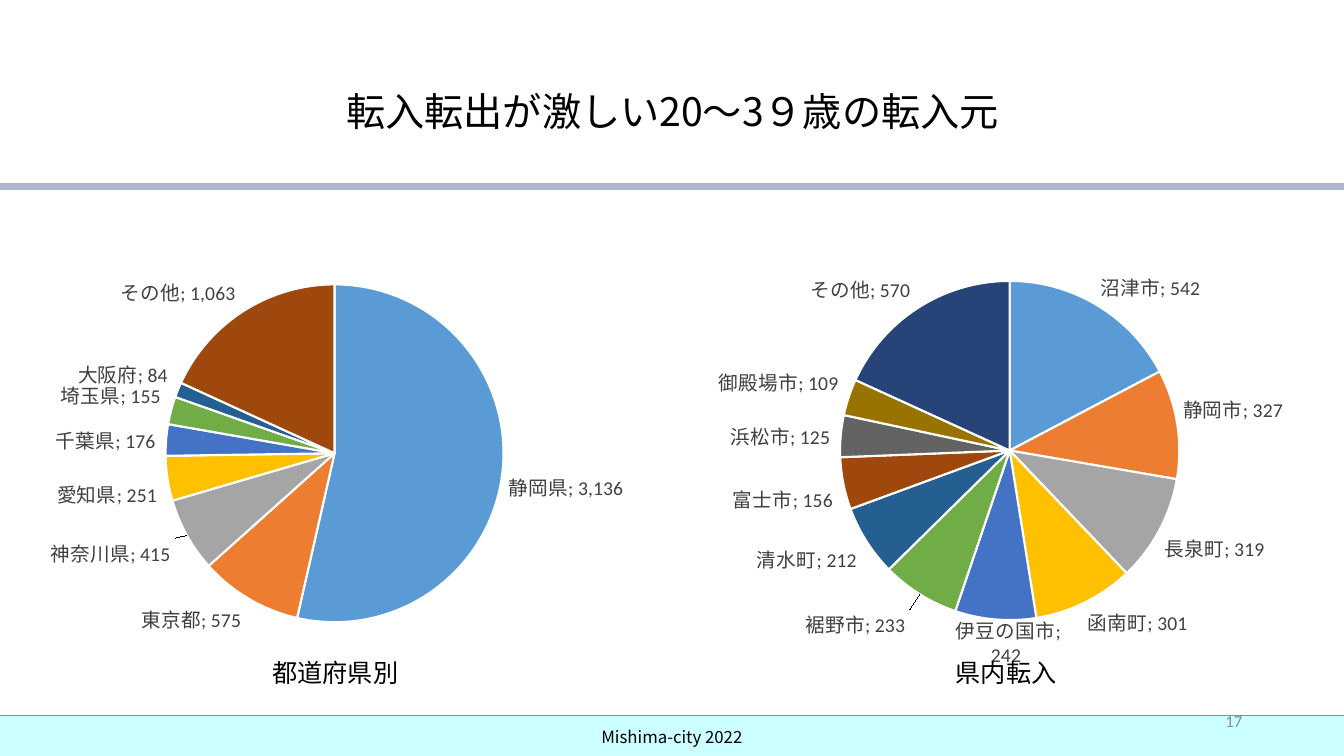
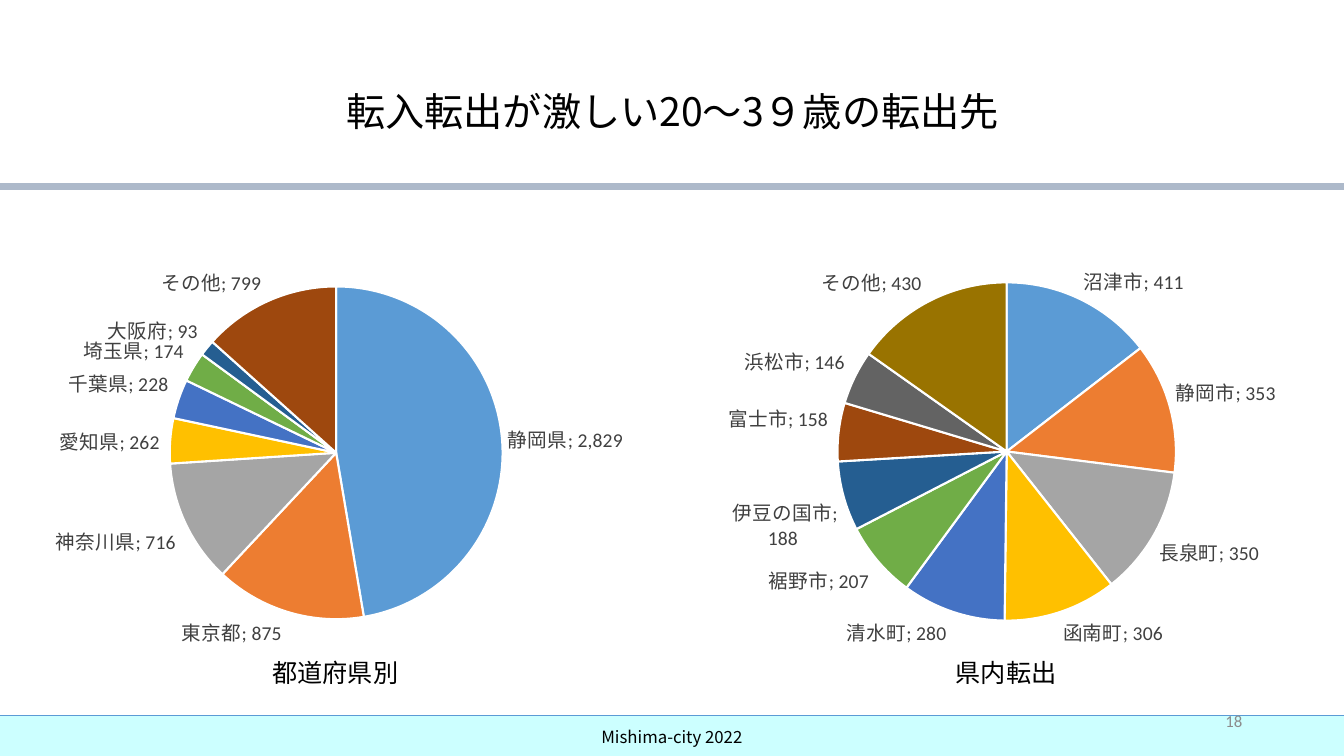
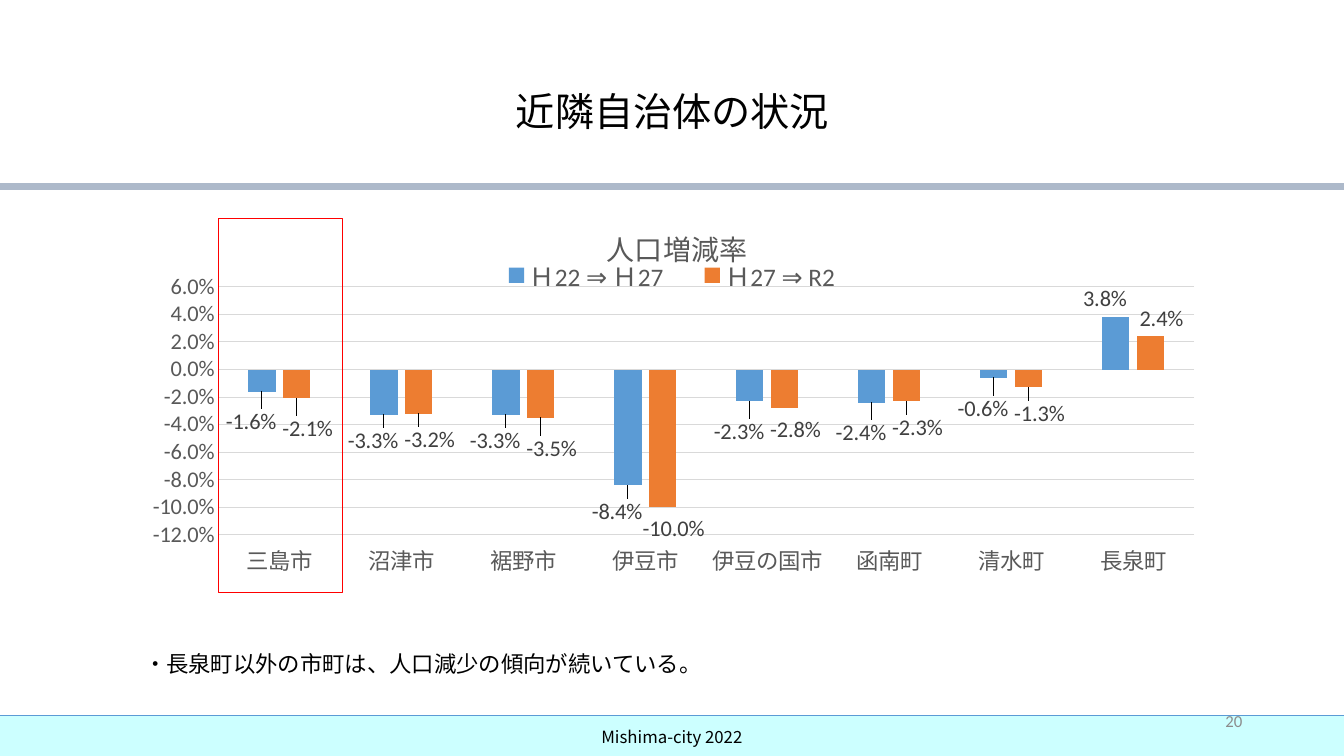
"""Builds three slides on migration and population change around Mishima."""
from dataclasses import dataclass
from typing import Optional

from lxml.etree import SubElement
from pptx import Presentation
from pptx.chart.chart import Chart
from pptx.chart.data import CategoryChartData
from pptx.dml.color import RGBColor
from pptx.enum.chart import XL_CHART_TYPE as ChartType
from pptx.enum.chart import XL_LABEL_POSITION as LabelPosition
from pptx.enum.chart import XL_LEGEND_POSITION as LegendPosition
from pptx.enum.chart import XL_TICK_LABEL_POSITION as TickLabelPosition
from pptx.enum.chart import XL_TICK_MARK as TickMark
from pptx.enum.shapes import MSO_CONNECTOR as ConnectorType
from pptx.enum.shapes import MSO_SHAPE as ShapeType
from pptx.enum.text import MSO_ANCHOR as Anchor
from pptx.enum.text import PP_ALIGN as Align
from pptx.oxml import parse_xml
from pptx.oxml.ns import nsdecls, qn
from pptx.oxml.xmlchemy import BaseOxmlElement
from pptx.slide import Slide
from pptx.text.text import Font, TextFrame
from pptx.util import Inches, Pt

Box = tuple[float, float, float, float]
Shift = tuple[float, float]


@dataclass(frozen=True)
class Theme:
    """Fonts, type sizes and colours of the deck."""
    latin: str = "Calibri"
    japanese: str = "Noto Sans CJK JP"
    title_size: int = 28
    chart_title_size: int = 20
    caption_size: int = 18
    body_size: int = 16
    label_size: int = 14
    small_size: int = 12
    chart_size: int = 10
    black: str = "000000"
    white: str = "FFFFFF"
    label: str = "404040"
    axis: str = "595959"
    grid: str = "D9D9D9"
    number: str = "8C8C8C"
    band: str = "CCFFFF"
    rule: str = "ADB9CA"
    highlight: str = "FF0000"
    palette: tuple[str, ...] = (
        "5B9BD5", "ED7D31", "A5A5A5", "FFC000", "4472C4", "70AD47",
        "255E91", "9E480E", "636363", "997300", "264478")


@dataclass(frozen=True)
class Pie:
    """One pie chart with its caption and moved labels."""
    caption: str
    caption_box: Box
    box: Box
    plot: Box
    values: dict[str, int]
    shifts: dict[int, Shift]


@dataclass(frozen=True)
class PieSlide:
    """A slide with two pies side by side."""
    title: str
    number: int
    pies: tuple[Pie, Pie]


@dataclass(frozen=True)
class BarSeries:
    """One column series with the shifts of its labels."""
    name: str
    values: tuple[float, ...]
    shift_x: float
    shifts_y: tuple[float, ...]


THEME = Theme()
WIDTH, HEIGHT = 13.33, 7.5
BAND_TOP, RULE_TOP = 7.1, 1.85
LEFT_CAPTION: Box = (2.58, 6.47, 1.49, 0.4)
RIGHT_CAPTION: Box = (9.16, 6.47, 1.64, 0.4)

PIE_SLIDES = (
    PieSlide("転入転出が激しい20～3９歳の転入元", 17, (
        Pie("都道府県別", LEFT_CAPTION, (0, 1.97, 6.65, 5.04), (0.247, 0.169, 0.504, 0.665),
            {"静岡県": 3136, "東京都": 575, "神奈川県": 415, "愛知県": 251,
             "千葉県": 176, "埼玉県": 155, "大阪府": 84, "その他": 1063},
            {2: (-0.01, 0)}),
        Pie("県内転入", RIGHT_CAPTION, (6.65, 1.97, 6.65, 5.04), (0.253, 0.162, 0.506, 0.668),
            {"沼津市": 542, "静岡市": 327, "長泉町": 319, "函南町": 301,
             "伊豆の国市": 242, "裾野市": 233, "清水町": 212, "富士市": 156,
             "浜松市": 125, "御殿場市": 109, "その他": 570},
            {4: (0.02, -0.02), 5: (-0.01, 0.02)}))),
    PieSlide("転入転出が激しい20～3９歳の転出先", 18, (
        Pie("都道府県別", LEFT_CAPTION, (0, 1.97, 6.61, 5.04), (0.254, 0.173, 0.501, 0.655),
            {"静岡県": 2829, "東京都": 875, "神奈川県": 716, "愛知県": 262,
             "千葉県": 228, "埼玉県": 174, "大阪府": 93, "その他": 799}, {}),
        Pie("県内転出", RIGHT_CAPTION, (6.61, 1.97, 6.69, 5.04), (0.253, 0.165, 0.503, 0.666),
            {"沼津市": 411, "静岡市": 353, "長泉町": 350, "函南町": 306,
             "清水町": 280, "裾野市": 207, "伊豆の国市": 188, "富士市": 158,
             "浜松市": 146, "その他": 430}, {}))),
)

CITIES = ("三島市", "沼津市", "裾野市", "伊豆市", "伊豆の国市", "函南町", "清水町", "長泉町")
BAR_SERIES = (
    BarSeries("Ｈ22 ⇒ Ｈ27", (-0.016, -0.033, -0.033, -0.084, -0.023, -0.024, -0.006, 0.038),
              -0.01, (0.03, 0.02, 0.02, 0.02, 0.03, 0.03, 0.03, 0)),
    BarSeries("Ｈ27 ⇒ R2", (-0.021, -0.032, -0.035, -0.1, -0.028, -0.023, -0.013, 0.024),
              0.01, (0.03, 0.02, 0.03, 0.01, 0.01, 0.02, 0.02, 0)),
)


def color(value: str) -> RGBColor:
    """Turn a hex string into a colour."""
    return RGBColor.from_string(value)


def inches(box: Box) -> list[Inches]:
    """Turn a box into lengths."""
    return [Inches(length) for length in box]


def style_font(font: Font, size: int, value: str, name: str = THEME.latin) -> None:
    """Set size, colour and typeface of a font."""
    font.size, font.name, font.bold = Pt(size), name, False
    font.color.rgb = color(value)


def write(frame: TextFrame, text: str, size: int, value: str = THEME.black,
          name: str = THEME.japanese, align: Align = Align.CENTER,
          anchor: Anchor = Anchor.MIDDLE) -> None:
    """Write one formatted run into a text frame."""
    frame.word_wrap, frame.vertical_anchor = True, anchor
    paragraph = frame.paragraphs[0]
    paragraph.alignment = align
    run = paragraph.add_run()
    run.text = text
    style_font(run.font, size, value, name)
    properties = run.font.fill and run._r.get_or_add_rPr()
    SubElement(properties, qn("a:ea")).set("typeface", THEME.japanese)


def add_text(slide: Slide, box: Box, text: str, size: int, **style) -> None:
    """Add a text box."""
    write(slide.shapes.add_textbox(*inches(box)).text_frame, text, size, **style)


def add_rule(slide: Slide, top: float, value: str, weight: float) -> None:
    """Add a line across the slide."""
    line = slide.shapes.add_connector(
        ConnectorType.STRAIGHT, 0, Inches(top), Inches(WIDTH), Inches(top))
    line.line.color.rgb, line.line.width = color(value), Pt(weight)
    SubElement(line.element.find(qn("p:spPr")), qn("a:effectLst"))


def add_slide(presentation: Presentation, title: str, number: int) -> Slide:
    """Add a slide with title, rules, footer band and number."""
    slide = presentation.slides.add_slide(presentation.slide_layouts[5])
    band = slide.shapes.add_shape(
        ShapeType.RECTANGLE, *inches((0, BAND_TOP, WIDTH, 0.42)))
    band.shadow.inherit = False
    band.fill.solid()
    band.fill.fore_color.rgb = color(THEME.band)
    band.line.fill.background()
    write(band.text_frame, "Mishima-city 2022", THEME.small_size)
    add_rule(slide, BAND_TOP, THEME.palette[0], 0.5)
    add_rule(slide, RULE_TOP, THEME.rule, 5)
    heading = slide.shapes.title
    heading.left, heading.top, heading.width, heading.height = inches((0.92, 0.4, 11.5, 1.45))
    write(heading.text_frame, title, THEME.title_size)
    heading.text_frame.paragraphs[0].line_spacing = 0.9
    add_text(slide, (9.42, 6.95, 3, 0.4), str(number), THEME.small_size,
             value=THEME.number, name=THEME.latin, align=Align.RIGHT)
    return slide


def set_layout(parent: BaseOxmlElement, index: int, x: float, y: float,
               size: Optional[Shift] = None, inner: bool = False, edge: bool = True) -> None:
    """Place a chart part by fractions of the chart area."""
    for layout in parent.findall(qn("c:layout")):
        parent.remove(layout)
    fields = [("layoutTarget", "inner")] if inner else []
    if edge:
        fields += [("xMode", "edge"), ("yMode", "edge")]
    fields += [("x", x), ("y", y)]
    if size:
        fields += [("w", size[0]), ("h", size[1])]
    body = "".join(f'<c:{tag} val="{value}"/>' for tag, value in fields)
    parent.insert(index, parse_xml(
        f'<c:layout {nsdecls("c")}><c:manualLayout>{body}</c:manualLayout></c:layout>'))


def add_chart(slide: Slide, kind: ChartType, box: Box, plot: Box,
              data: CategoryChartData) -> Chart:
    """Add a chart with a fixed plot area."""
    chart = slide.shapes.add_chart(kind, *inches(box), data).chart
    style_font(chart.font, THEME.chart_size, THEME.black)
    chart.has_title = chart.has_legend = False
    x, y, *size = plot
    set_layout(chart.element.find(".//" + qn("c:plotArea")), 0, x, y, tuple(size), inner=True)
    return chart


def label_series(chart: Chart, index: int, size: int, number_format: str,
                 shifts: dict[int, Shift], category: bool = False) -> None:
    """Label a series and move single labels."""
    series = chart.plots[0].series[index]
    labels = series.data_labels
    labels.show_value, labels.show_category_name = True, category
    labels.position = LabelPosition.OUTSIDE_END
    labels.number_format, labels.number_format_is_linked = number_format, False
    style_font(labels.font, size, THEME.label)
    for position in shifts:
        label = series.points[position].data_label
        style_font(label.font, size, THEME.label)
        label.position = LabelPosition.OUTSIDE_END
    element = chart.element.xpath(".//c:ser")[index]
    for label in element.xpath(".//c:dLbl"):
        x, y = shifts[int(label.find(qn("c:idx")).get("val"))]
        set_layout(label, 1, x, y, edge=False)
        label.find(qn("c:showCatName")).set("val", str(int(category)))
    if category:
        for last in element.xpath(".//c:showBubbleSize"):
            last.addnext(parse_xml(f'<c:separator {nsdecls("c")}>; </c:separator>'))


def add_pie(slide: Slide, pie: Pie) -> None:
    """Add a pie chart and its caption."""
    data = CategoryChartData(number_format="#,##0")
    data.categories = list(pie.values)
    data.add_series("Series 1", list(pie.values.values()))
    chart = add_chart(slide, ChartType.PIE, pie.box, pie.plot, data)
    chart.plots[0].vary_by_categories = True
    for index in range(len(pie.values)):
        style = chart.plots[0].series[0].points[index].format
        style.fill.solid()
        style.fill.fore_color.rgb = color(THEME.palette[index])
        style.line.color.rgb, style.line.width = color(THEME.white), Pt(1.5)
    label_series(chart, 0, THEME.label_size, r"#,##0_);[Red]\(#,##0\)", pie.shifts, category=True)
    add_text(slide, pie.caption_box, pie.caption, THEME.caption_size,
             name=THEME.latin, anchor=Anchor.TOP)


def style_axes(chart: Chart) -> None:
    """Format both axes of the column chart."""
    for axis in (chart.category_axis, chart.value_axis):
        axis.major_tick_mark = axis.minor_tick_mark = TickMark.NONE
        style_font(axis.tick_labels.font, THEME.body_size, THEME.axis)
    chart.category_axis.tick_label_position = TickLabelPosition.LOW
    values = chart.value_axis
    values.minimum_scale, values.maximum_scale, values.major_unit = -0.12, 0.06, 0.02
    values.tick_labels.number_format = "0.0%"
    values.tick_labels.number_format_is_linked = False
    values.format.line.fill.background()
    for line in (chart.category_axis.format.line, values.major_gridlines.format.line):
        line.color.rgb, line.width = color(THEME.grid), Pt(0.75)


def add_population_chart(slide: Slide) -> None:
    """Add the column chart of population change."""
    data = CategoryChartData(number_format="0.0%")
    data.categories = CITIES
    for series in BAR_SERIES:
        data.add_series(series.name, series.values)
    chart = add_chart(slide, ChartType.COLUMN_CLUSTERED, (1.27, 1.91, 10.79, 4.44),
                      (0.083, 0.211, 0.897, 0.554), data)
    plot = chart.plots[0]
    plot.vary_by_categories, plot.gap_width, plot.overlap = False, 219, -27
    for index, series in enumerate(BAR_SERIES):
        fill = plot.series[index].format.fill
        fill.solid()
        fill.fore_color.rgb = color(THEME.palette[index])
        plot.series[index].invert_if_negative = False
        shifts = {place: (series.shift_x, y) for place, y in enumerate(series.shifts_y)}
        label_series(chart, index, THEME.body_size, "0.0%", shifts)
    style_axes(chart)
    chart.has_title = chart.has_legend = True
    write(chart.chart_title.text_frame, "人口増減率", THEME.chart_title_size,
          value=THEME.axis, name=THEME.latin)
    set_layout(chart.element.find(".//" + qn("c:title")), 1, 0.435, 0.06)
    chart.legend.position = LegendPosition.BOTTOM
    chart.legend.include_in_layout = False
    style_font(chart.legend.font, THEME.caption_size, THEME.axis)
    set_layout(chart.element.find(".//" + qn("c:legend")), 1, 0.32, 0.14, (0.36, 0.09))


def add_population_slide(presentation: Presentation) -> None:
    """Add the slide on neighbouring municipalities."""
    slide = add_slide(presentation, "近隣自治体の状況", 20)
    add_population_chart(slide)
    frame = slide.shapes.add_shape(ShapeType.RECTANGLE, *inches((2.17, 2.17, 1.23, 3.71)))
    frame.shadow.inherit = False
    frame.fill.background()
    frame.line.color.rgb, frame.line.width = color(THEME.highlight), Pt(1)
    add_text(slide, (1.33, 6.4, 9.92, 0.37), "・長泉町以外の市町は、人口減少の傾向が続いている。",
             THEME.body_size, align=Align.LEFT, anchor=Anchor.TOP)


def main() -> None:
    """Build and save the presentation."""
    presentation = Presentation()
    presentation.slide_width, presentation.slide_height = Inches(WIDTH), Inches(HEIGHT)
    for content in PIE_SLIDES:
        slide = add_slide(presentation, content.title, content.number)
        for pie in content.pies:
            add_pie(slide, pie)
    add_population_slide(presentation)
    presentation.save("out.pptx")


if __name__ == "__main__":
    main()
